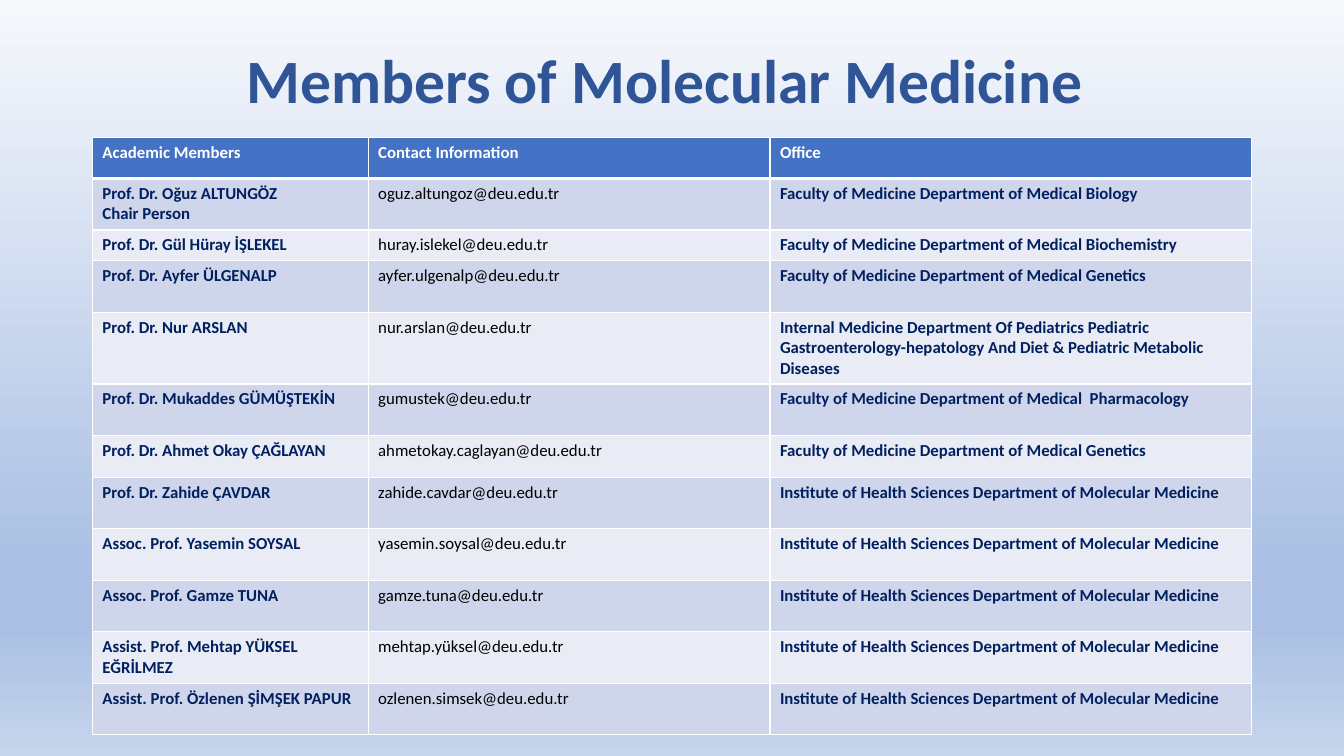
from lxml import etree
from pptx import Presentation
from pptx.dml.color import RGBColor
from pptx.enum.text import MSO_ANCHOR, PP_ALIGN
from pptx.oxml.ns import qn
from pptx.util import Pt

CENTER = PP_ALIGN.CENTER
MIDDLE = MSO_ANCHOR.MIDDLE
FONT = "Calibri"
COLORS = {
    "title": "2F5597",
    "header": "4472C4",
    "odd_row": "CFD5EA",
    "even_row": "E9EBF5",
    "navy": "002060",
    "black": "000000",
    "white": "FFFFFF",
}
BACKGROUND_STOPS = [(0, "F6F8FC"), (74, "ABC0E4"), (83, "ABC0E4"), (100, "C7D5ED")]

BIOLOGY = "Faculty of Medicine Department of Medical Biology"
BIOCHEMISTRY = "Faculty of Medicine Department of Medical Biochemistry"
GENETICS = "Faculty of Medicine Department of Medical Genetics"
PEDIATRICS = ("Internal Medicine Department Of Pediatrics Pediatric "
              "Gastroenterology-hepatology And Diet & Pediatric Metabolic Diseases")
PHARMACOLOGY = "Faculty of Medicine Department of Medical  Pharmacology"
MOLECULAR = "Institute of Health Sciences Department of Molecular Medicine"

HEADINGS = ("Academic Members", "Contact Information", "Office")
MEMBERS = [
    ("Prof. Dr. Oğuz ALTUNGÖZ\nChair Person", "oguz.altungoz", BIOLOGY),
    ("Prof. Dr. Gül Hüray İŞLEKEL", "huray.islekel", BIOCHEMISTRY),
    ("Prof. Dr. Ayfer ÜLGENALP", "ayfer.ulgenalp", GENETICS),
    ("Prof. Dr. Nur ARSLAN", "nur.arslan", PEDIATRICS),
    ("Prof. Dr. Mukaddes GÜMÜŞTEKİN", "gumustek", PHARMACOLOGY),
    ("Prof. Dr. Ahmet Okay ÇAĞLAYAN", "ahmetokay.caglayan", GENETICS),
    ("Prof. Dr. Zahide ÇAVDAR", "zahide.cavdar", MOLECULAR),
    ("Assoc. Prof. Yasemin SOYSAL", "yasemin.soysal", MOLECULAR),
    ("Assoc. Prof. Gamze TUNA", "gamze.tuna", MOLECULAR),
    ("Assist. Prof. Mehtap YÜKSEL EĞRİLMEZ", "mehtap.yüksel", MOLECULAR),
    ("Assist. Prof. Özlenen ŞİMŞEK PAPUR", "ozlenen.simsek", MOLECULAR),
]
COLUMN_WIDTHS = [197, 287, 344]
ROW_HEIGHTS = [29.5, 36.8, 22, 36.8, 51.2, 36.8, 29.8] + [36.8] * 5


def style(paragraph, size, color, bold):
    font = paragraph.font
    font.name = FONT
    font.size = Pt(size)
    font.bold = bold
    font.color.rgb = RGBColor.from_string(COLORS[color])


def add_borders(cell, widths):
    properties = cell._tc.get_or_add_tcPr()
    for position, (side, width) in enumerate(widths.items()):
        line = etree.Element(qn(f"a:ln{side}"), w=str(Pt(width)))
        solid = etree.SubElement(line, qn("a:solidFill"))
        etree.SubElement(solid, qn("a:srgbClr"), val=COLORS["white"])
        properties.insert(position, line)


presentation = Presentation()
presentation.slide_width = Pt(960)
presentation.slide_height = Pt(540)
slide = presentation.slides.add_slide(presentation.slide_layouts[6])

background = slide.background.fill
background.gradient()
background.gradient_angle = 270
stops = slide._element.find(".//" + qn("a:gsLst"))
for stop in list(stops):
    stops.remove(stop)
for percent, color in BACKGROUND_STOPS:
    stop = etree.SubElement(stops, qn("a:gs"), pos=str(percent * 1000))
    etree.SubElement(stop, qn("a:srgbClr"), val=color)

title = slide.shapes.add_textbox(Pt(66), Pt(28.8), Pt(828), Pt(62)).text_frame
title.word_wrap = True
title.vertical_anchor = MIDDLE
heading = title.paragraphs[0]
heading.text = "Members of Molecular Medicine "
heading.alignment = CENTER
heading.line_spacing = 0.9
style(heading, 44, "title", True)

rows = [HEADINGS] + [(name, f"{mail}@deu.edu.tr", office) for name, mail, office in MEMBERS]
members = slide.shapes.add_table(
    len(rows), len(HEADINGS), Pt(66), Pt(98), Pt(sum(COLUMN_WIDTHS)), Pt(sum(ROW_HEIGHTS))
).table
for column, width in zip(members.columns, COLUMN_WIDTHS):
    column.width = Pt(width)

for r, (texts, height) in enumerate(zip(rows, ROW_HEIGHTS)):
    members.rows[r].height = Pt(height)
    row_fill = "header" if r == 0 else "odd_row" if r % 2 else "even_row"
    borders = {"L": 1, "R": 1, "T": 3 if r == 1 else 1, "B": 3 if r == 0 else 1}
    for c, text in enumerate(texts):
        cell = members.cell(r, c)
        cell.text = text
        cell.fill.solid()
        cell.fill.fore_color.rgb = RGBColor.from_string(COLORS[row_fill])
        add_borders(cell, borders)
        is_mail = r > 0 and c == 1
        text_color = "white" if r == 0 else "black" if is_mail else "navy"
        for paragraph in cell.text_frame.paragraphs:
            style(paragraph, 12, text_color, not is_mail)

presentation.save("out.pptx")
